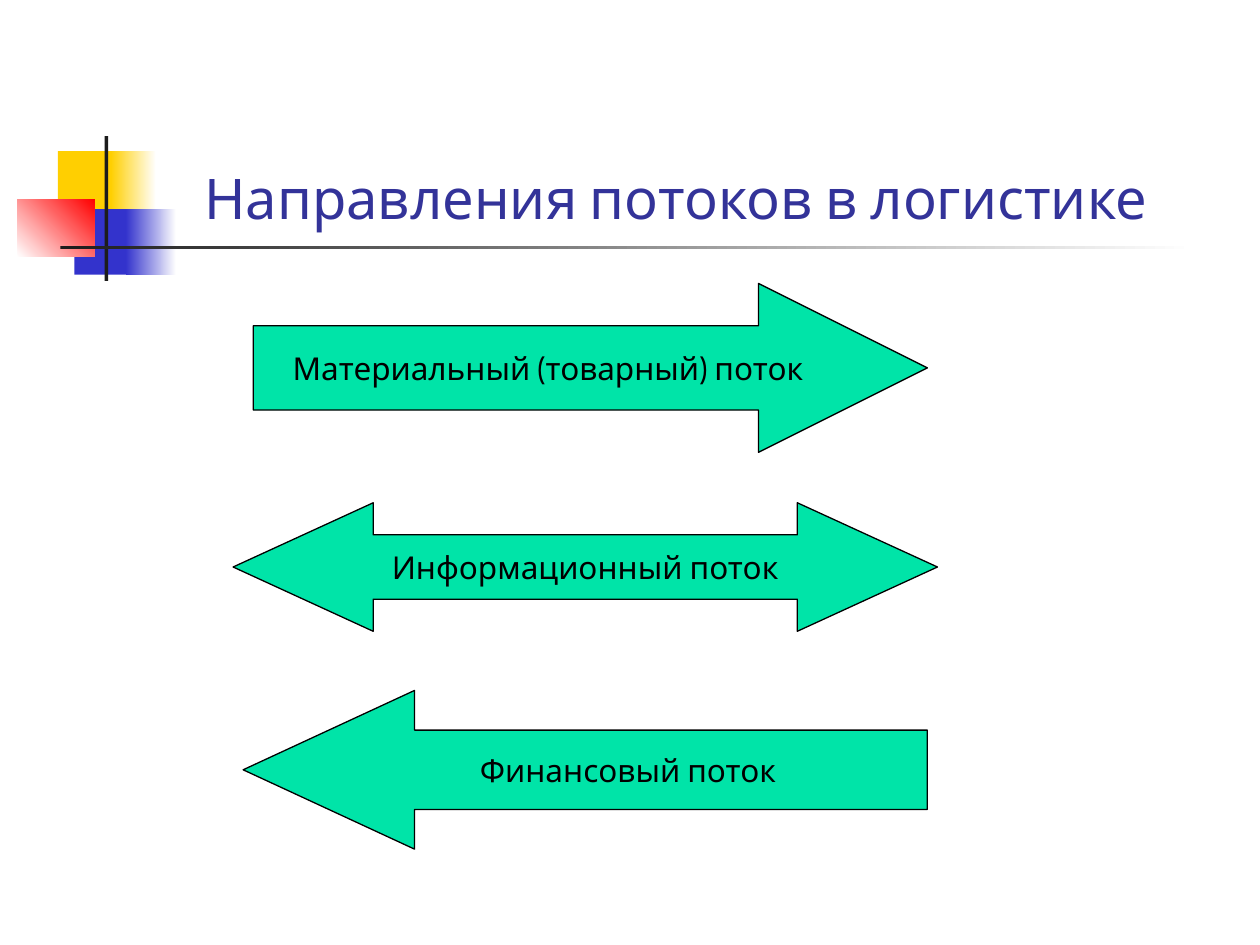
from pptx import Presentation
from pptx.dml.color import RGBColor
from pptx.enum import shapes, text
from pptx.util import Inches, Pt

FONT = "Cabin"
YELLOW = RGBColor(0xFF, 0xCF, 0x01)
BLUE = RGBColor(0x33, 0x33, 0xCC)
RED = RGBColor(0xFF, 0, 0)
DARK = RGBColor(0x1C, 0x1C, 0x1C)
WHITE = RGBColor(0xFF, 0xFF, 0xFF)
BLACK = RGBColor(0, 0, 0)
NAVY = RGBColor(0x33, 0x33, 0x99)
GREEN = RGBColor(0, 0xE4, 0xA8)

TITLE = "Направления потоков в логистике"
TITLE_AREA = (1.26, 0.23, 8.52, 1.6)
DECOR = [
    ((0.46, 1.2, 0.48, 0.52), (YELLOW,), 0),
    ((0.88, 1.2, 0.36, 0.52), (YELLOW, WHITE), 0),
    ((0.59, 1.66, 0.46, 0.52), (BLUE,), 0),
    ((1, 1.66, 0.4, 0.52), (BLUE, WHITE), 0),
    ((0.14, 1.58, 0.61, 0.46), (WHITE, RED), 45),
    ((0.83, 1.08, 0.03, 1.15), (DARK,), 0),
    ((0.48, 1.95, 9, 0.03), (DARK, WHITE), 0),
]
FLOWS = [
    ("Материальный (товарный) поток", "RIGHT_ARROW", (2.01, 2.25, 5.35, 1.34), 1),
    ("Информационный поток", "LEFT_RIGHT_ARROW", (1.85, 3.99, 5.59, 1.02), 1.09),
    ("Финансовый поток", "LEFT_ARROW", (1.93, 5.48, 5.43, 1.26), 1.08),
]


def add_shape(page, kind, area):
    shape = page.shapes.add_shape(
        shapes.MSO_SHAPE[kind], *(Inches(length) for length in area)
    )
    shape.shadow.inherit = False
    return shape


def paint(fill, colours, angle=0):
    if len(colours) == 1:
        fill.solid()
        fill.fore_color.rgb = colours[0]
        return
    fill.gradient()
    fill.gradient_angle = angle
    for stop, colour in zip(fill.gradient_stops, colours):
        stop.color.rgb = colour


def write(frame, words, size, colour, align, anchor):
    frame.text = words
    frame.vertical_anchor = anchor
    para = frame.paragraphs[0]
    para.alignment = align
    para.font.name = FONT
    para.font.size = Pt(size)
    para.font.color.rgb = colour


def main():
    deck = Presentation()
    deck.slide_width, deck.slide_height = Inches(10), Inches(7.5)
    page = deck.slides.add_slide(deck.slide_layouts[5])

    for area, colours, angle in DECOR:
        block = add_shape(page, "RECTANGLE", area)
        paint(block.fill, colours, angle)
        block.line.fill.background()

    title = page.shapes.title
    title.left, title.top, title.width, title.height = map(Inches, TITLE_AREA)
    frame = title.text_frame
    frame.auto_size = text.MSO_AUTO_SIZE.NONE
    frame.margin_left = Inches(0.36)
    frame.margin_bottom = 0
    write(frame, TITLE, 32, NAVY, text.PP_ALIGN.LEFT, text.MSO_ANCHOR.BOTTOM)

    for words, kind, area, head in FLOWS:
        arrow = add_shape(page, kind, area)
        arrow.adjustments[0] = 0.5
        arrow.adjustments[1] = head
        paint(arrow.fill, (GREEN,))
        arrow.line.color.rgb = BLACK
        arrow.line.width = Pt(0.75)
        arrow.text_frame.word_wrap = False
        write(arrow.text_frame, words, 18, BLACK,
              text.PP_ALIGN.CENTER, text.MSO_ANCHOR.MIDDLE)

    deck.save("out.pptx")


if __name__ == "__main__":
    main()
